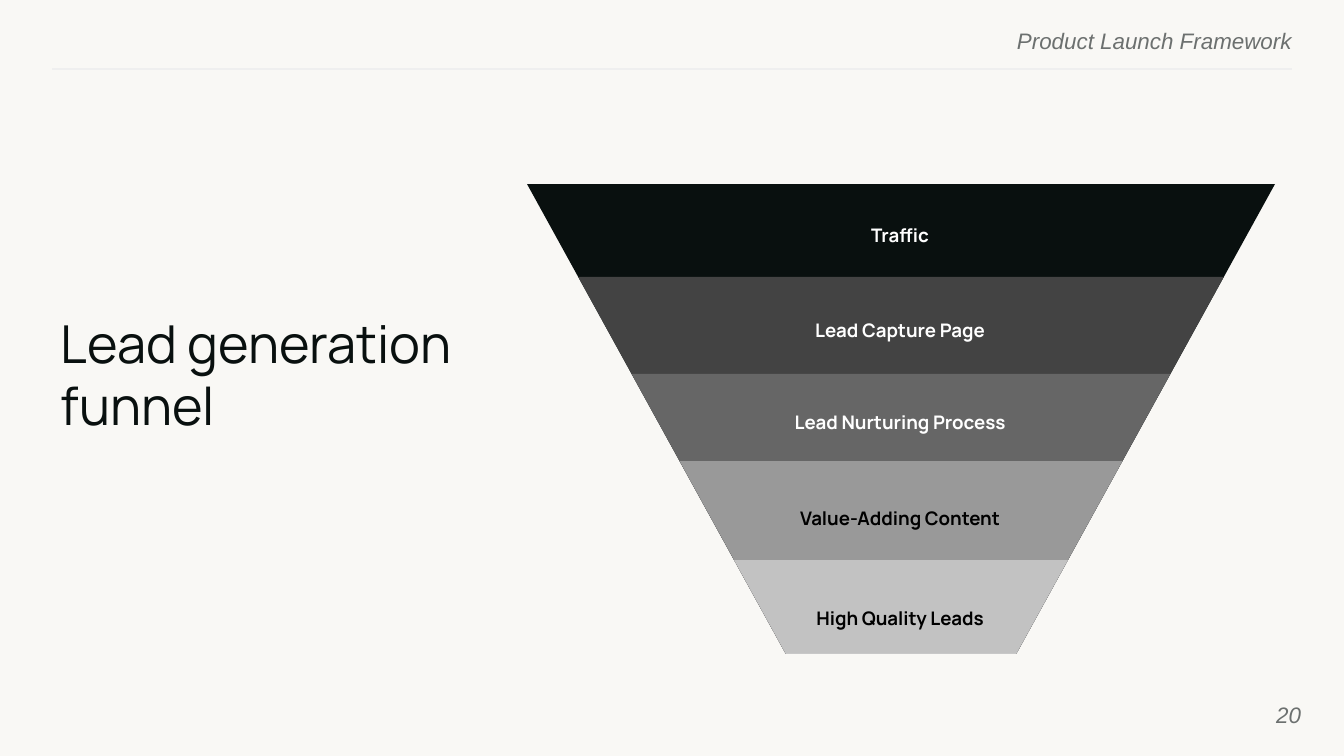
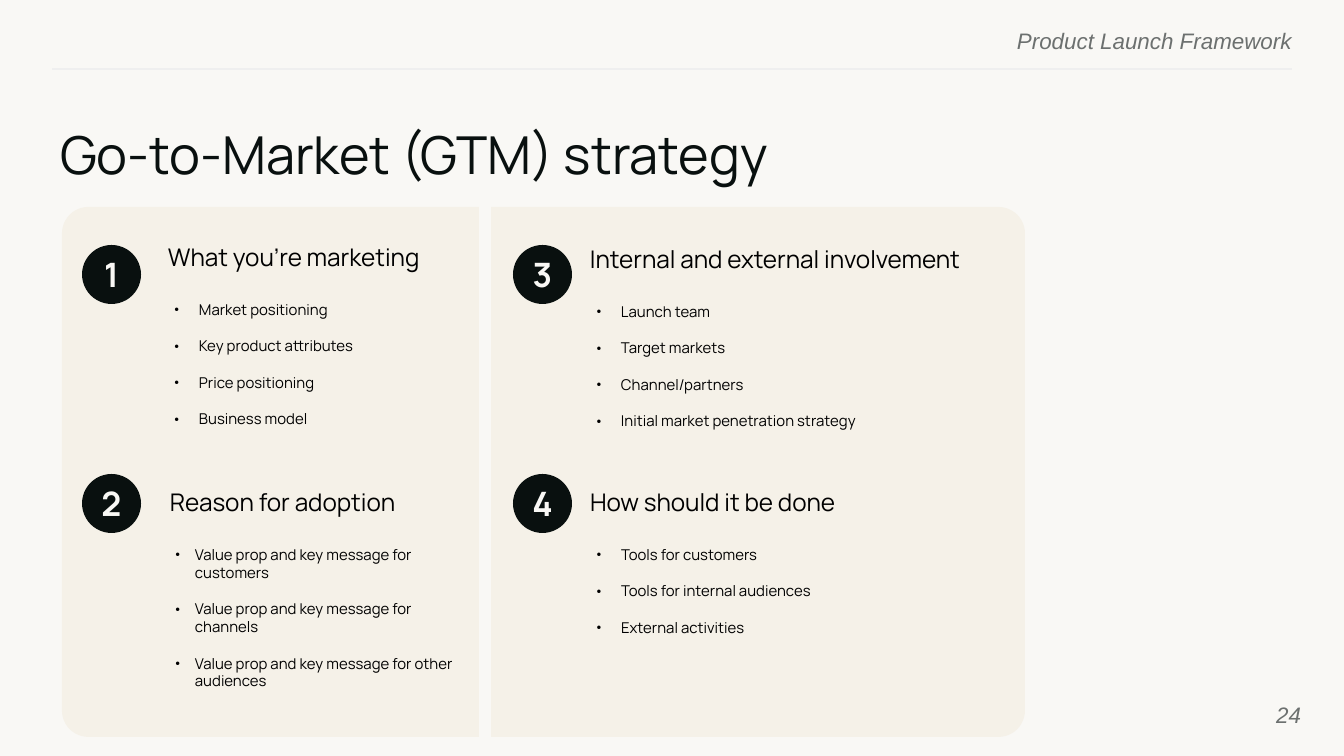
from lxml.etree import SubElement
from pptx import Presentation
from pptx.dml.color import RGBColor
from pptx.enum.shapes import MSO_CONNECTOR, MSO_SHAPE
from pptx.enum.text import MSO_ANCHOR, MSO_AUTO_SIZE, PP_ALIGN
from pptx.oxml.ns import qn
from pptx.util import Pt

SLIDE_WIDTH, SLIDE_HEIGHT = 1344, 756
EMU_PER_PX = 9144000 / SLIDE_WIDTH

PAPER = RGBColor(0xF9, 0xF8, 0xF5)
INK = RGBColor(0x09, 0x10, 0x0F)
MUTED = RGBColor(0x6C, 0x70, 0x6F)
RULE = RGBColor(0xEF, 0xEF, 0xEF)
PANEL = RGBColor(0xF5, 0xF1, 0xE8)
CHARCOAL = RGBColor(0x43, 0x43, 0x43)
GRAY = RGBColor(0x66, 0x66, 0x66)
SILVER = RGBColor(0x99, 0x99, 0x99)
LIGHT = RGBColor(0xC2, 0xC2, 0xC2)
BLACK = RGBColor(0, 0, 0)
WHITE = RGBColor(0xFF, 0xFF, 0xFF)

HEADING_FONT, FOOTER_FONT = "Manrope", "Arial"
HEADER = "Product Launch Framework"

# label, fill, text colour, band top, label top, label width
FUNNEL_STAGES = [
    ("Traffic", INK, WHITE, 184, 199, 544),
    ("Lead Capture Page", CHARCOAL, WHITE, 277, 294, 544),
    ("Lead Nurturing Process", GRAY, WHITE, 374, 386, 348),
    ("Value-Adding Content", SILVER, BLACK, 461, 482, 348),
    ("High Quality Leads", LIGHT, BLACK, 560, 582, 261),
]
FUNNEL_CENTER, LABEL_CENTER = 901, 900
FUNNEL_WIDTH, FUNNEL_APEX = 748, 863
FUNNEL_CUT = (570, 654, 602, 224)

# heading, bullets, text area, bullet indent, bullet hang
TOPICS = [
    ("What you’re marketing",
     ["Market positioning", "Key product attributes", "Price positioning",
      "Business model"],
     (155, 235, 312, 176), 31, 27),
    ("Reason for adoption",
     ["Value prop and key message for customers",
      "Value prop and key message for channels",
      "Value prop and key message for other audiences"],
     (157, 480, 312, 228), 25, 22),
    ("Internal and external involvement",
     ["Launch team", "Target markets", "Channel/partners",
      "Initial market penetration strategy"],
     (577, 237, 603, 138), 31, 27),
    ("How should it be done",
     ["Tools for customers", "Tools for internal audiences",
      "External activities"],
     (577, 480, 402, 137), 31, 27),
]
BADGE_LEFTS, BADGE_TOPS, BADGE_SIZE = (82, 513), (245, 474), 59


def px(length):
    return round(length * EMU_PER_PX)


def style(para, size, color, font=HEADING_FONT, bold=False, italic=False):
    for span in para.runs:
        span.font.name, span.font.size = font, Pt(size)
        span.font.bold, span.font.italic = bold, italic
        span.font.color.rgb = color


def set_margins(frame, side=0, edge=0):
    frame.margin_left = frame.margin_right = px(side)
    frame.margin_top = frame.margin_bottom = px(edge)


def add_box(page, area, side=0, edge=0):
    box = page.shapes.add_textbox(*map(px, area))
    box.text_frame.word_wrap = True
    set_margins(box.text_frame, side, edge)
    return box.text_frame


def add_text(page, area, text, size, color, align=PP_ALIGN.LEFT, **look):
    frame = add_box(page, area)
    frame.text = text
    frame.paragraphs[0].alignment = align
    style(frame.paragraphs[0], size, color, **look)
    return frame


def add_shape(page, kind, area, fill):
    shape = page.shapes.add_shape(kind, *map(px, area))
    shape.shadow.inherit = False
    shape.fill.solid()
    shape.fill.fore_color.rgb = fill
    shape.line.fill.background()
    return shape


def add_line(page, start, end, color, width):
    line = page.shapes.add_connector(
        MSO_CONNECTOR.STRAIGHT, *map(px, start + end))
    line.line.color.rgb = color
    line.line.width = Pt(width)
    SubElement(line._element.spPr, qn("a:effectLst"))


def add_page(deck, number):
    """Add a blank page with the shared background, header and number."""
    page = deck.slides.add_slide(deck.slide_layouts[6])
    page.background.fill.solid()
    page.background.fill.fore_color.rgb = PAPER
    look = dict(align=PP_ALIGN.RIGHT, font=FOOTER_FONT, italic=True)
    add_text(page, (775, 27, 517, 24), HEADER, 12, MUTED, **look)
    add_line(page, (1292, 69), (52, 69), RULE, 0.75)
    footer = add_text(page, (1220, 686, 81, 58), str(number), 12, MUTED, **look)
    footer.vertical_anchor = MSO_ANCHOR.MIDDLE
    return page


def add_title(page, area, text):
    add_text(page, area, text, 28, INK)


def add_bullet(frame, text, indent, hang):
    para = frame.add_paragraph()
    para.text = text
    props = para._p.get_or_add_pPr()
    props.set("marL", str(px(indent)))
    props.set("indent", str(-px(hang)))
    color = SubElement(props, qn("a:buClr"))
    SubElement(color, qn("a:srgbClr")).set("val", str(BLACK))
    SubElement(props, qn("a:buFont")).set("typeface", HEADING_FONT)
    SubElement(props, qn("a:buChar")).set("char", "•")
    style(para, 8, BLACK)
    return para


def add_funnel(page):
    """Nest inverted triangles on one apex, then cut the tip off."""
    ratio = FUNNEL_WIDTH / (FUNNEL_APEX - FUNNEL_STAGES[0][3])
    for _, fill, _, top, _, _ in FUNNEL_STAGES:
        height = FUNNEL_APEX - top
        width = ratio * height
        area = (FUNNEL_CENTER - width / 2, top, width, height)
        add_shape(page, MSO_SHAPE.ISOSCELES_TRIANGLE, area, fill).rotation = 180

    for label, _, color, _, top, width in FUNNEL_STAGES:
        frame = add_box(
            page, (LABEL_CENTER - width / 2, top, width, 50), 13, 13)
        frame.auto_size = MSO_AUTO_SIZE.SHAPE_TO_FIT_TEXT
        frame.text = label
        para = frame.paragraphs[0]
        para.alignment = PP_ALIGN.CENTER
        para.line_spacing = 1.53
        style(para, 10, color, bold=True)
    add_shape(page, MSO_SHAPE.RECTANGLE, FUNNEL_CUT, PAPER)


def add_badge(page, index):
    column, row = divmod(index, len(BADGE_TOPS))
    area = (BADGE_LEFTS[column], BADGE_TOPS[row], BADGE_SIZE, BADGE_SIZE)
    frame = add_shape(page, MSO_SHAPE.OVAL, area, INK).text_frame
    set_margins(frame)
    frame.vertical_anchor = MSO_ANCHOR.MIDDLE
    frame.text = str(index + 1)
    frame.paragraphs[0].alignment = PP_ALIGN.CENTER
    style(frame.paragraphs[0], 18, PAPER, bold=True)


def add_topic(page, heading, bullets, area, indent, hang):
    frame = add_box(page, area, 13, 7)
    frame.text = heading
    frame.paragraphs[0].space_after = Pt(15.6)
    style(frame.paragraphs[0], 13, BLACK)
    for position, bullet in enumerate(bullets):
        para = add_bullet(frame, bullet, indent, hang)
        if position:
            para.space_before = Pt(10)


def build_funnel_page(deck):
    page = add_page(deck, 20)
    add_title(page, (61, 311, 445, 134), "Lead generation funnel")
    add_funnel(page)


def build_strategy_page(deck):
    page = add_page(deck, 24)
    panel = add_shape(
        page, MSO_SHAPE.ROUNDED_RECTANGLE, (62, 207, 963, 530), PANEL)
    panel.adjustments[0] = 0.05
    add_title(page, (60, 122, 1241, 69), "Go-to-Market (GTM) strategy")
    add_line(page, (485, 199), (485, 737), PAPER, 6)
    for index, topic in enumerate(TOPICS):
        add_badge(page, index)
        add_topic(page, *topic)


def main():
    deck = Presentation()
    deck.slide_width, deck.slide_height = px(SLIDE_WIDTH), px(SLIDE_HEIGHT)
    build_funnel_page(deck)
    build_strategy_page(deck)
    deck.save("out.pptx")


if __name__ == "__main__":
    main()
